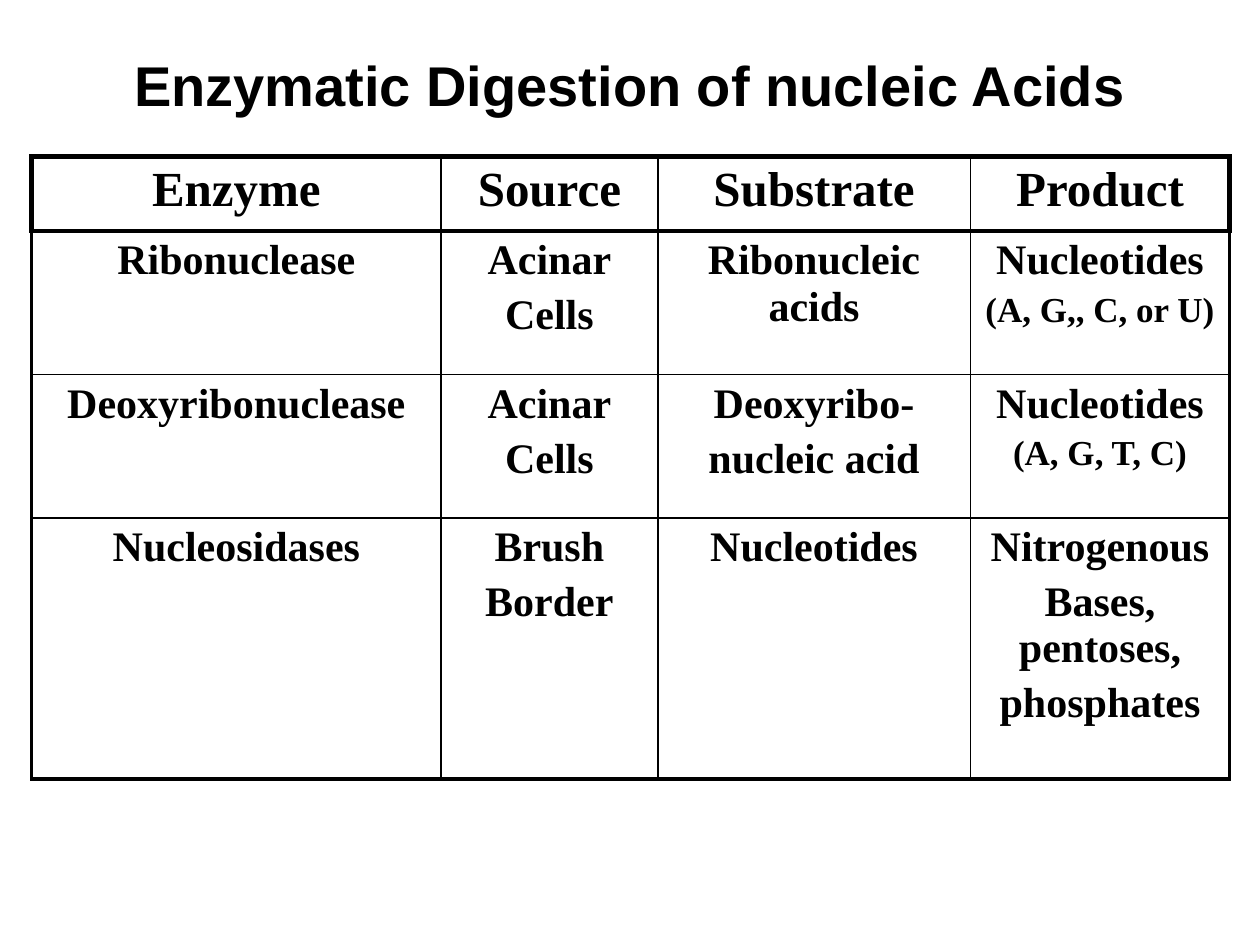
"""Build a slide with a table of the enzymes that digest nucleic acids."""
import pptx
import pptx.dml.color
import pptx.enum.text
import pptx.oxml.ns
import pptx.util
import lxml.etree

Cm, Pt = pptx.util.Cm, pptx.util.Pt
BLACK = pptx.dml.color.RGBColor(0, 0, 0)
CENTER = pptx.enum.text.PP_ALIGN.CENTER
MIDDLE = pptx.enum.text.MSO_ANCHOR.MIDDLE
TITLE_FONT = {"name": "Arial", "size": Pt(32), "bold": True}
TABLE_FONT = {"name": "Times New Roman", "bold": True}
COLUMN_WIDTHS = [8.25, 4.37, 6.3, 5.23]
ROW_HEIGHTS = [1.5, 2.89, 2.89, 5.26]
ROWS = [
    ["Enzyme", "Source", "Substrate", "Product"],
    ["Ribonuclease", "Acinar\nCells", "Ribonucleic acids", "Nucleotides\n(A, G,, C, or U)"],
    ["Deoxyribonuclease", "Acinar\nCells", "Deoxyribo-\nnucleic acid", "Nucleotides\n(A, G, T, C)"],
    ["Nucleosidases", "Brush\nBorder", "Nucleotides", "Nitrogenous\nBases, pentoses,\nphosphates"],
]


def write(para, text, values):
    para.alignment = CENTER
    span = para.add_run()
    span.text = text
    span.font.color.rgb = BLACK
    for name, value in values.items():
        setattr(span.font, name, value)


def draw_borders(cell, widths):
    properties = cell._tc.get_or_add_tcPr()
    for side, width in widths.items():
        line = lxml.etree.SubElement(properties, pptx.oxml.ns.qn("a:ln" + side), w=str(Pt(width)))
        fill = lxml.etree.SubElement(line, pptx.oxml.ns.qn("a:solidFill"))
        lxml.etree.SubElement(fill, pptx.oxml.ns.qn("a:srgbClr"), val=str(BLACK))


deck = pptx.Presentation()
deck.slide_width, deck.slide_height = Cm(25.4), Cm(19.05)
page = deck.slides.add_slide(deck.slide_layouts[5])

title = page.shapes.title
place = {"left": Cm(1.06), "top": Cm(0.85), "width": Cm(23.28), "height": Cm(1.69)}
for name, value in place.items():
    setattr(title, name, value)
title.text_frame.vertical_anchor = MIDDLE
write(title.text_frame.paragraphs[0], "Enzymatic Digestion of nucleic Acids", TITLE_FONT)

table = page.shapes.add_table(
    len(ROWS), len(COLUMN_WIDTHS), Cm(0.64), Cm(3.16), Cm(sum(COLUMN_WIDTHS)), Cm(sum(ROW_HEIGHTS))
).table
table.first_row = table.horz_banding = False
for column, width in zip(table.columns, COLUMN_WIDTHS):
    column.width = Cm(width)
for row, height in zip(table.rows, ROW_HEIGHTS):
    row.height = Cm(height)

last_row, last_column = len(ROWS) - 1, len(COLUMN_WIDTHS) - 1
for row_index, texts in enumerate(ROWS):
    header = row_index == 0
    edge = 3 if header else 2.25
    for column_index, text in enumerate(texts):
        cell = table.cell(row_index, column_index)
        draw_borders(cell, {
            "L": edge if column_index == 0 else 1,
            "R": edge if column_index == last_column else 1,
            "T": 3 if row_index <= 1 else 1,
            "B": 3 if header else 2.25 if row_index == last_row else 1,
        })
        cell.fill.background()
        for index, line in enumerate(text.split("\n")):
            frame = cell.text_frame
            para = frame.add_paragraph() if index else frame.paragraphs[0]
            size = 28 if header else 20 if line.startswith("(") else 24
            para.space_before = Pt(size * 0.2)
            write(para, line, {**TABLE_FONT, "size": Pt(size)})

deck.save("out.pptx")
